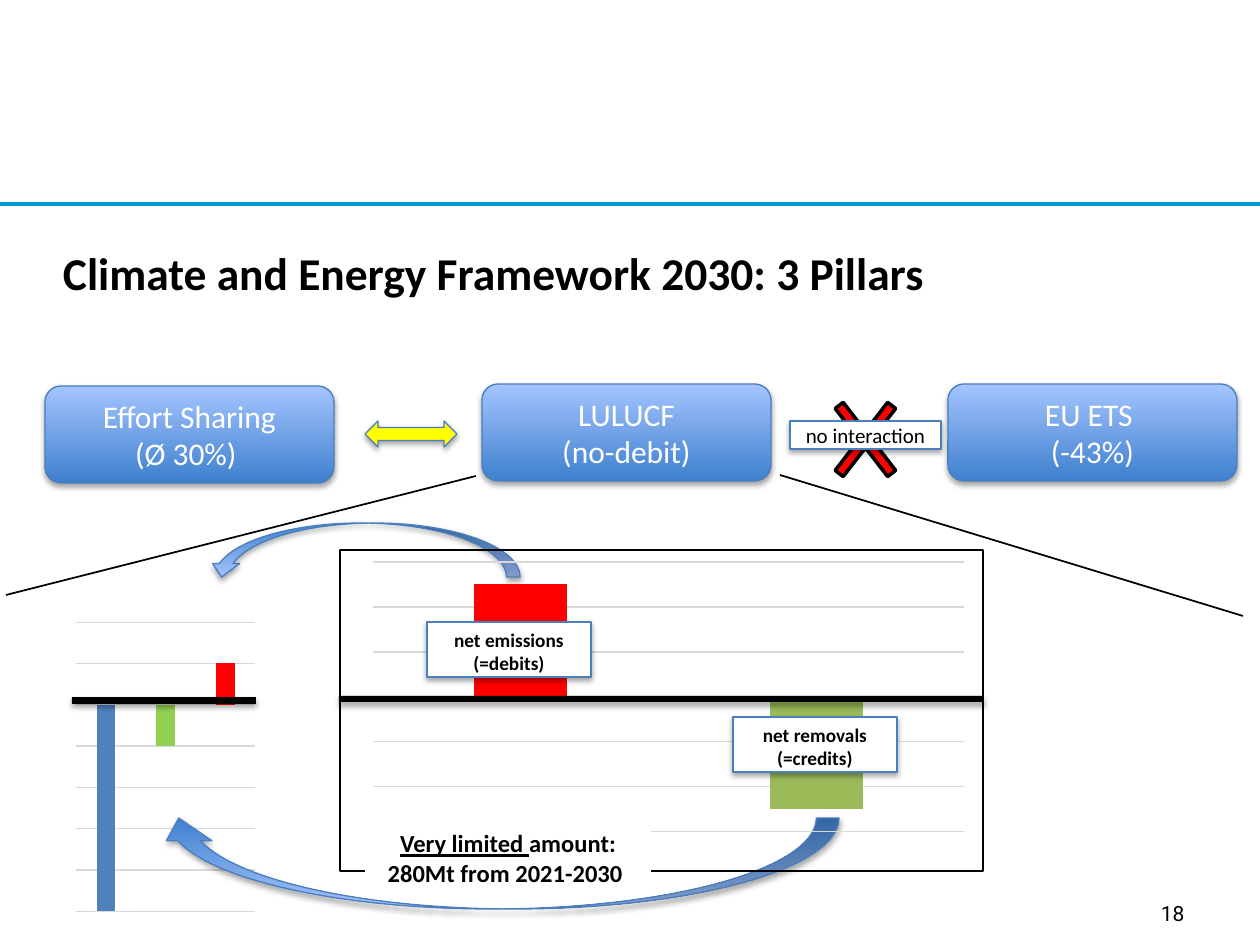
from dataclasses import dataclass
from lxml import etree
from pptx import Presentation, util as u
from pptx.chart.data import CategoryChartData
from pptx.dml.color import RGBColor
from pptx.enum import chart as charts, shapes, text
from pptx.oxml import parse_xml
from pptx.oxml.ns import nsdecls, qn

PX = 914400 / 126
COLORS = {
    "black": "000000", "white": "FFFFFF", "rule": "009CD1", "outline": "4B7EBC",
    "deep": "3F80CE", "light": "A4C4FF", "red": "FF0000", "yellow": "FFFF00",
    "grid": "D9D9D9", "blue": "4F81BD", "lime": "92D050", "olive": "9BBB59",
}
KIND = shapes.MSO_SHAPE
CENTER, RIGHT = text.PP_ALIGN.CENTER, text.PP_ALIGN.RIGHT
MIDDLE, TOP = text.MSO_ANCHOR.MIDDLE, text.MSO_ANCHOR.TOP


def px(*lengths):
    return [u.Emu(round(n * PX)) for n in lengths]


def rgb(name):
    return RGBColor.from_string(COLORS[name])


@dataclass
class Canvas:
    slide: object
    font: str = "Calibri"

    def add_text(self, shape, paragraphs, size, color="black", align=None, anchor=TOP,
                 bold=None, font=None):
        """Each paragraph is a list of (words, underlined) runs."""
        frame = shape.text_frame
        frame.word_wrap = True
        frame.vertical_anchor = anchor
        for i, runs in enumerate(paragraphs):
            para = frame.paragraphs[0] if i == 0 else frame.add_paragraph()
            para.alignment = align
            for words, underlined in runs:
                run = para.add_run()
                run.text = words
                run.font.name = font or self.font
                run.font.size = u.Pt(size)
                run.font.bold = bold
                run.font.underline = underlined
                run.font.color.rgb = rgb(color)
        return frame

    def label(self, box, words, size, **style):
        shape = self.slide.shapes.add_textbox(*px(*box))
        return self.add_text(shape, [[(words, None)]], size, **style)

    def line(self, start, end, color="black", width=1):
        line = self.slide.shapes.add_connector(
            shapes.MSO_CONNECTOR.STRAIGHT, *px(*start, *end))
        line.line.color.rgb = rgb(color)
        line.line.width = u.Pt(width)
        etree.SubElement(line._element.spPr, qn("a:effectLst"))

    def shape(self, kind, box, fill="gradient", line="outline", width=0.75,
              shadow=True, turn=0):
        shape = self.slide.shapes.add_shape(kind, *px(*box))
        shape.rotation = turn
        if fill == "gradient":
            shape.fill.gradient()
            shape.fill.gradient_angle = 90
            for stop, color in zip(shape.fill.gradient_stops, ("deep", "light")):
                stop.color.rgb = rgb(color)
        else:
            shape.fill.solid()
            shape.fill.fore_color.rgb = rgb(fill)
        if line:
            shape.line.color.rgb = rgb(line)
            shape.line.width = u.Pt(width)
        else:
            shape.line.fill.background()
        shape.shadow.inherit = False
        if shadow:
            shape._element.spPr.find(qn("a:effectLst")).append(parse_xml(
                f'<a:outerShdw {nsdecls("a")} blurRad="40000" dist="23000" '
                'dir="5400000" rotWithShape="0"><a:srgbClr val="000000">'
                '<a:alpha val="35000"/></a:srgbClr></a:outerShdw>'))
        return shape

    def columns(self, box, values, colors, low, high, step, layout, border=None):
        data = CategoryChartData()
        data.categories = [str(i + 1) for i in range(len(values))]
        data.add_series("Series 1", values)
        chart = self.slide.shapes.add_chart(
            charts.XL_CHART_TYPE.COLUMN_CLUSTERED, *px(*box), data).chart
        chart.has_legend = chart.has_title = False
        chart.font.name, chart.font.size = self.font, u.Pt(10)
        chart.font.color.rgb = rgb("black")
        chart.category_axis.visible = False
        axis = chart.value_axis
        axis.visible = False
        axis.minimum_scale, axis.maximum_scale, axis.major_unit = low, high, step
        axis.has_major_gridlines = True
        axis.major_gridlines.format.line.color.rgb = rgb("grid")
        axis.major_gridlines.format.line.width = u.Pt(0.75)
        plot = chart.plots[0]
        plot.gap_width, plot.overlap, plot.vary_by_categories = 219, -27, False
        series = plot.series[0]
        series.invert_if_negative = False
        series.format.fill.solid()
        series.format.fill.fore_color.rgb = rgb("blue")
        for i, color in enumerate(colors):
            fill = series.points[i].format.fill
            fill.solid()
            fill.fore_color.rgb = rgb(color)
        self.frame_chart(chart._chartSpace, layout, border)

    def frame_chart(self, space, layout, border):
        # Fixed inner plot area
        area = space.chart.plotArea
        for old in area.findall(qn("c:layout")):
            area.remove(old)
        places = "".join(f'<c:{key} val="{value}"/>'
                         for key, value in zip("xywh", layout))
        area.insert(0, parse_xml(
            f'<c:layout {nsdecls("c")}><c:manualLayout><c:layoutTarget val="inner"/>'
            f'<c:xMode val="edge"/><c:yMode val="edge"/>{places}'
            '</c:manualLayout></c:layout>'))
        # Clear background, optional border
        stroke = (f'<a:solidFill><a:srgbClr val="{COLORS[border]}"/></a:solidFill>'
                  if border else '<a:noFill/>')
        space.chart.addnext(parse_xml(
            f'<c:spPr {nsdecls("c", "a")}><a:noFill/>'
            f'<a:ln w="12700">{stroke}</a:ln></c:spPr>'))


def main():
    deck = Presentation()
    deck.slide_width, deck.slide_height = px(1260, 945)
    canvas = Canvas(deck.slides.add_slide(deck.slide_layouts[6]))

    # Header and page number
    canvas.line((0, 204), (1260, 204), "rule", 2)
    title = canvas.label((63, 244, 1134, 107),
                         "Climate and Energy Framework 2030: 3 Pillars", 26, bold=True)
    title.margin_left = title.margin_top = 0
    title.paragraphs[0].line_spacing = u.Pt(32)
    canvas.label((1005, 888, 192, 50), "18", 12, align=RIGHT, anchor=MIDDLE,
                 font="Roboto")

    # Three pillars
    for left, top, name, target in (
            (45, 386, "Effort Sharing", "(Ø 30%) "),
            (482, 384, "LULUCF", "(no-debit)"),
            (948, 384, "EU ETS ", "(-43%)")):
        pillar = canvas.shape(KIND.ROUNDED_RECTANGLE, (left, top, 289, 97))
        canvas.add_text(pillar, [[(name, None)], [(target, None)]], 18, "white",
                        CENTER, MIDDLE)

    # Links between the pillars
    cross = canvas.shape(KIND.MATH_MULTIPLY, (815, 374, 101, 131), "red", "black", 2,
                         shadow=False)
    cross.adjustments[0] = 0.1
    barrier = canvas.shape(KIND.RECTANGLE, (790, 421, 151, 28), "white")
    canvas.add_text(barrier, [[("no interaction", None)]], 12, align=CENTER,
                    anchor=MIDDLE)
    canvas.shape(KIND.LEFT_RIGHT_ARROW, (365, 421, 92, 26), "yellow")

    # Effort sharing chart, flows and zoom lines
    canvas.columns((58, 517, 198, 446), (-100, -20, 20), ("blue", "lime", "red"),
                   -120, 40, 20, (0.092, 0.236, 0.908, 0.741))
    canvas.shape(KIND.CURVED_UP_ARROW, (208, 523, 312, 54), turn=180)
    canvas.shape(KIND.CURVED_DOWN_ARROW, (156, 818, 683, 91), turn=180)
    canvas.line((476, 476), (6, 595))
    canvas.line((1243, 616), (780, 475))

    # Land use chart
    canvas.columns((339, 549, 645, 323), (100, -100), ("red", "olive"),
                   -120, 120, 40, (0.051, 0.038, 0.92, 0.84), "black")

    # Zero lines and balance labels
    for zero in ((339, 696, 645, 6), (72, 697, 184, 6)):
        canvas.shape(KIND.RECTANGLE, zero, "black", "black", 0.5)
    for left, top, words in ((733, 717, "net removals (=credits)"),
                             (427, 622, "net emissions (=debits)")):
        balance = canvas.shape(KIND.RECTANGLE, (left, top, 164, 55), "white")
        canvas.add_text(balance, [[(words, None)]], 11, align=CENTER, bold=True)

    # Limit note
    limit = canvas.shape(KIND.RECTANGLE, (365, 822, 286, 72), "white", None,
                         shadow=False)
    canvas.add_text(limit, [[("Very limited ", True),
                             ("amount: 280Mt from 2021-2030 ", False)]],
                    14, align=CENTER, bold=True)

    deck.save("out.pptx")


if __name__ == "__main__":
    main()
